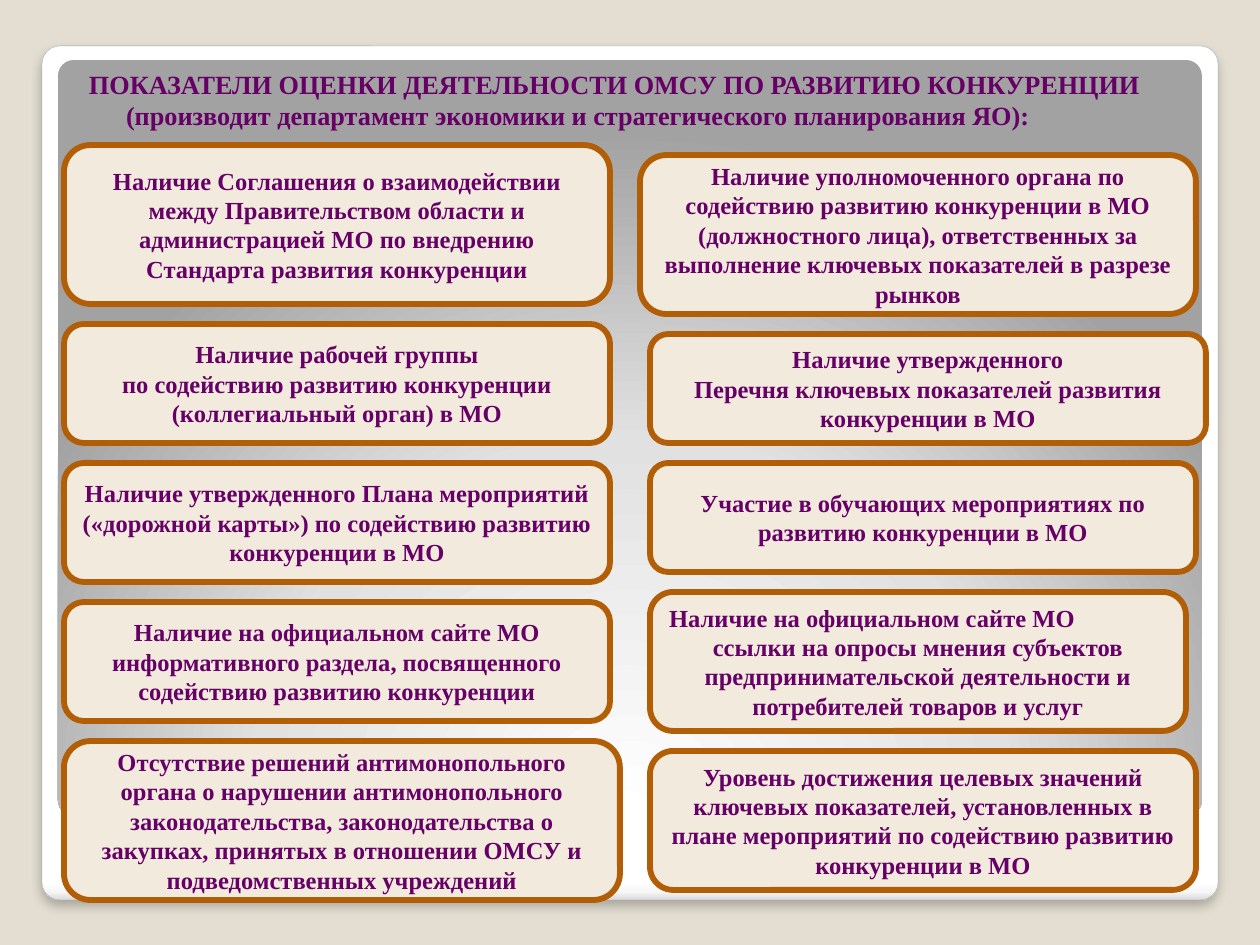
import pptx
import pptx.util
import pptx.dml.color
import pptx.enum.shapes
import pptx.enum.text
import pptx.oxml
import pptx.oxml.ns

PX = 914400 / 126
FONT = "Times New Roman"
INK = "660066"
GAP = 20
ALIGN = pptx.enum.text.PP_ALIGN
ANCHOR = pptx.enum.text.MSO_ANCHOR
ROUND = pptx.enum.shapes.MSO_SHAPE.ROUNDED_RECTANGLE
NS = pptx.oxml.ns.nsdecls("a")

LEFT = [
    (0, 546, 159, ["Наличие Соглашения о взаимодействии между Правительством области и "
                   "администрацией МО по внедрению Стандарта развития конкуренции"]),
    (0, 546, 119, ["Наличие рабочей группы",
                   "по содействию развитию конкуренции (коллегиальный орган) в МО"]),
    (0, 546, 119, ["Наличие утвержденного Плана мероприятий («дорожной карты») "
                   "по содействию развитию конкуренции в МО"]),
    (0, 546, 119, ["Наличие на официальном сайте МО информативного раздела, "
                   "посвященного содействию развитию конкуренции"]),
    (0, 556, 159, ["Отсутствие решений антимонопольного органа о нарушении антимонопольного "
                   "законодательства, законодательства о закупках, принятых в отношении "
                   "ОМСУ и подведомственных учреждений"]),
]
RIGHT = [
    (0, 556, 159, ["Наличие уполномоченного органа по содействию развитию конкуренции в МО "
                   "(должностного лица), ответственных за выполнение ключевых показателей "
                   "в разрезе рынков"]),
    (10, 556, 109, ["Наличие утвержденного",
                    "Перечня ключевых показателей развития конкуренции в МО"]),
    (10, 546, 109, ["Участие в обучающих мероприятиях по развитию конкуренции в МО"]),
    (10, 536, 139, [("Наличие на официальном сайте МО", ALIGN.LEFT),
                    "ссылки на опросы мнения субъектов предпринимательской деятельности "
                    "и потребителей товаров и услуг"]),
    (10, 546, 139, ["Уровень достижения целевых значений ключевых показателей, установленных "
                    "в плане мероприятий по содействию развитию конкуренции в МО"]),
]


def px(num):
    """Turn px into EMU."""
    return pptx.util.Emu(round(num * PX))


def hue(code):
    """Turn a hex string into a colour."""
    return pptx.dml.color.RGBColor.from_string(code)


def write(para, text, size):
    """Add one bold run to a paragraph."""
    run = para.add_run()
    run.text = text
    run.font.name = FONT
    run.font.size = pptx.util.Pt(size)
    run.font.bold = True
    run.font.color.rgb = hue(INK)


def box(slide, rect):
    """Add a rounded box without a shadow."""
    shape = slide.shapes.add_shape(ROUND, *map(px, rect))
    shape.shadow.inherit = False
    return shape


def blend(shape, stops, tail):
    """Fill a shape with a gradient."""
    shape.fill.background()
    old = shape.element.spPr.find(pptx.oxml.ns.qn("a:noFill"))
    marks = "".join(f'<a:gs pos="{pos * 1000}"><a:srgbClr val="{code}"/></a:gs>'
                    for pos, code in stops)
    new = pptx.oxml.parse_xml(
        f'<a:gradFill {NS} rotWithShape="1"><a:gsLst>{marks}</a:gsLst>{tail}</a:gradFill>')
    old.getparent().replace(old, new)


def shade(shape):
    """Give a shape a soft shadow below it."""
    list_ = shape.element.spPr.find(pptx.oxml.ns.qn("a:effectLst"))
    list_.append(pptx.oxml.parse_xml(
        f'<a:outerShdw {NS} blurRad="76200" dist="50800" dir="5400000" algn="tl" '
        'rotWithShape="0"><a:srgbClr val="000000"><a:alpha val="25000"/>'
        '</a:srgbClr></a:outerShdw>'))


def frame(slide, rect):
    """Draw the white sheet and the grey panel in it."""
    left, top, wide, high = rect
    sheet = box(slide, rect)
    blend(sheet, [(0, "FFFFFF"), (98, "FFFFFF"), (99, "F7F7F7"), (100, "DADADA")],
          '<a:lin ang="5400000" scaled="0"/>')
    sheet.line.color.rgb = hue("A4A4A4")
    sheet.line.width = pptx.util.Pt(0.16)
    shade(sheet)
    panel = box(slide, (left + 16, top + 14, wide - 32, high - 98))
    blend(panel, [(0, "FFFFFF"), (55, "E1E1E1"), (100, "A2A2A2")],
          '<a:path path="circle"><a:fillToRect l="50000" t="175000" r="50000" '
          'b="-75000"/></a:path>')
    panel.line.fill.background()
    for shape in (sheet, panel):
        shape.adjustments[0] = 0.021


def head(slide, rect):
    """Place the title over the panel."""
    title = slide.shapes.title
    title.element.getparent().append(title.element)
    title.left, title.top, title.width, title.height = map(px, rect)
    text = title.text_frame
    text.word_wrap = True
    text.auto_size = pptx.enum.text.MSO_AUTO_SIZE.NONE
    text.vertical_anchor = ANCHOR.TOP
    text.margin_left, text.margin_top = px(25), px(13)
    text.margin_right, text.margin_bottom = px(13), px(6)
    para = text.paragraphs[0]
    para.alignment = ALIGN.LEFT
    para.space_before = pptx.util.Pt(2.5)
    props = para._p.get_or_add_pPr()
    props.set("marL", str(px(37)))
    props.set("indent", str(-px(37)))
    write(para, "ПОКАЗАТЕЛИ ОЦЕНКИ ДЕЯТЕЛЬНОСТИ ОМСУ ПО РАЗВИТИЮ КОНКУРЕНЦИИ "
                "(производит департамент экономики и стратегического планирования ЯО):", 15)


def card(slide, rect, lines):
    """Draw one indicator card."""
    shape = box(slide, rect)
    shape.fill.solid()
    shape.fill.fore_color.rgb = hue("F3EADE")
    shape.line.color.rgb = hue("B25E07")
    shape.line.width = pptx.util.Pt(3.35)
    text = shape.text_frame
    text.word_wrap = True
    text.vertical_anchor = ANCHOR.MIDDLE
    for num, line in enumerate(lines):
        words, side = (line, ALIGN.CENTER) if isinstance(line, str) else line
        para = text.add_paragraph() if num else text.paragraphs[0]
        para.alignment = side
        write(para, words, 14)


def stack(slide, left, top, cards):
    """Stack cards downward with equal gaps."""
    for shift, wide, high, lines in cards:
        card(slide, (left + shift, top, wide, high), lines)
        top += high + GAP


def main():
    """Build and save the slide."""
    deck = pptx.Presentation()
    deck.slide_width, deck.slide_height = px(1260), px(945)
    slide = deck.slides.add_slide(deck.slide_layouts[5])
    back = slide.background.fill
    back.solid()
    back.fore_color.rgb = hue("E3DED1")
    frame(slide, (42, 46, 1176, 854))
    head(slide, (64, 55, 1128, 88))
    stack(slide, 64, 145, LEFT)
    stack(slide, 640, 155, RIGHT)
    deck.save("out.pptx")


if __name__ == "__main__":
    main()
